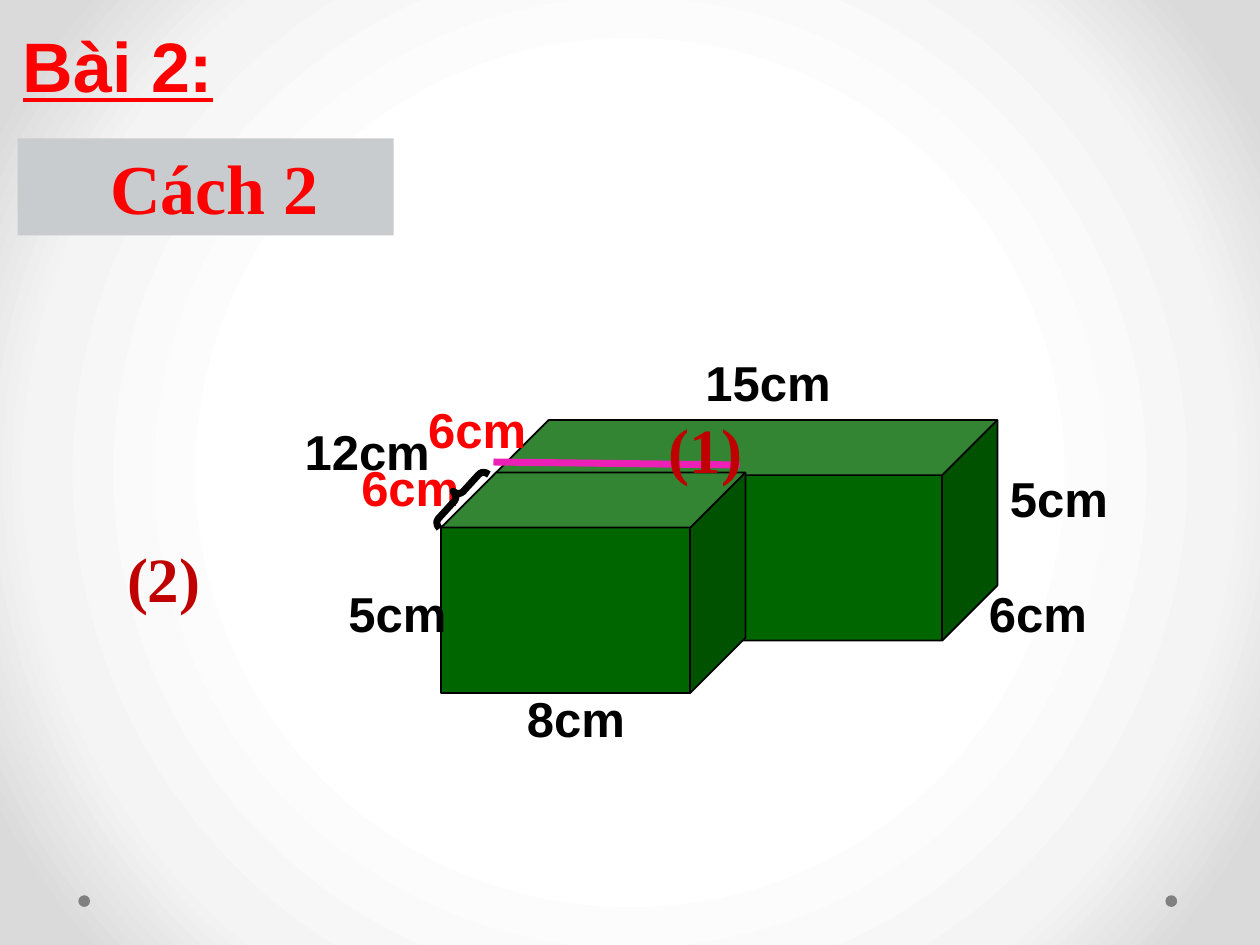
from typing import NamedTuple

from lxml.etree import SubElement
from pptx import Presentation
from pptx.dml.color import RGBColor
from pptx.enum.shapes import MSO_CONNECTOR, MSO_SHAPE
from pptx.enum.text import MSO_ANCHOR, PP_ALIGN
from pptx.oxml import parse_xml
from pptx.oxml.ns import nsdecls, qn
from pptx.util import Pt

COLOURS = {
    "black": "000000",
    "red": "FF0000",
    "dark red": "C00000",
    "green": "006600",
    "pink": "EC20B7",
    "grey": "808080",
    "silver": "C8CCCE",
}
BACKDROP_STOPS = {50: "FFFFFF", 76: "F4F4F4", 92: "DADADA"}


class Frame(NamedTuple):
    left: float
    top: float
    width: float
    height: float


class Label(NamedTuple):
    text: str
    frame: Frame
    colour: str = "black"
    size: int = 28
    font: str = "Arial"
    underline: bool = False


DOTS = [Frame(left, 511.6, 6.7, 6.7) for left in (44.8, 666)]
BACK_BLOCK = Frame(282, 240, 288, 126)
FRONT_BLOCK = Frame(252, 270, 174, 126)
BACK_LABELS = [
    Label("12cm", Frame(167, 237.6, 105, 41)),
    Label("15cm", Frame(396, 198, 102, 41)),
    Label("6cm", Frame(558, 330, 72, 41)),
    Label("5cm", Frame(570, 264, 72, 41)),
]
DEPTH_LABELS = [
    Label("6cm", Frame(199.4, 257.8, 72, 41), "red"),
    Label("6cm", Frame(237.6, 224.6, 72, 41), "red"),
]
FRONT_LABELS = [
    Label("8cm", Frame(294, 390, 72, 41)),
    Label("5cm", Frame(192, 330, 72, 41)),
]
TITLES = [
    Label("(1)", Frame(375, 231, 72, 51), "dark red", 36, "Times New Roman"),
    Label("(2)", Frame(65.5, 304.6, 57, 51), "dark red", 36, "Times New Roman"),
    Label("Bài 2:", Frame(6, 9.4, 126, 55.4), "red", 40, underline=True),
]
METHOD = Label(" Cách 2", Frame(10, 79, 215, 55.6), "red", 40, "Times New Roman")


def rgb(name: str) -> RGBColor:
    """Return the named colour."""
    return RGBColor.from_string(COLOURS[name])


def paint_background(page) -> None:
    """Fill the page with a circular gradient."""
    page.background.fill.solid()
    stops = "".join(
        f'<a:gs pos="{place * 1000}"><a:srgbClr val="{colour}"/></a:gs>'
        for place, colour in BACKDROP_STOPS.items()
    )
    gradient = parse_xml(
        f'<a:gradFill {nsdecls("a")} rotWithShape="1"><a:gsLst>{stops}</a:gsLst>'
        '<a:path path="circle"><a:fillToRect l="50000" t="50000" r="50000" b="50000"/>'
        "</a:path></a:gradFill>"
    )
    solid = page.element.xpath("p:cSld/p:bg/p:bgPr/a:solidFill")[0]
    solid.getparent().replace(solid, gradient)


def add_figure(page, kind, frame: Frame, fill: str = "", line: str = "", weight: float = 1):
    """Add a preset shape with optional fill and outline."""
    figure = page.shapes.add_shape(kind, *map(Pt, frame))
    figure.shadow.inherit = False
    if fill:
        figure.fill.solid()
        figure.fill.fore_color.rgb = rgb(fill)
    else:
        figure.fill.background()
    if line:
        figure.line.color.rgb = rgb(line)
        figure.line.width = Pt(weight)
    else:
        figure.line.fill.background()
    return figure


def write(box, label: Label, alignment=PP_ALIGN.LEFT) -> None:
    """Write the label's text into a box."""
    box.text_frame.word_wrap = True
    box.text_frame.vertical_anchor = MSO_ANCHOR.TOP
    para = box.text_frame.paragraphs[0]
    para.text = label.text
    para.alignment = alignment
    para.font.name = label.font
    para.font.size = Pt(label.size)
    para.font.bold = True
    para.font.underline = label.underline
    para.font.color.rgb = rgb(label.colour)


def add_labels(page, labels: list[Label]) -> None:
    """Add a text box for each label."""
    for label in labels:
        write(page.shapes.add_textbox(*map(Pt, label.frame)), label)


def add_divider(page) -> None:
    """Add the line that splits the solid in two."""
    divider = page.shapes.add_connector(
        MSO_CONNECTOR.STRAIGHT, Pt(422.6), Pt(265.7), Pt(282), Pt(264)
    )
    divider.line.color.rgb = rgb("pink")
    divider.line.width = Pt(4)
    SubElement(divider.element.spPr, qn("a:effectLst"))


def add_brace(page) -> None:
    """Add the slanted brace along the depth edge."""
    brace = add_figure(
        page, MSO_SHAPE.LEFT_BRACE, Frame(257.8, 262.8, 8.6, 41.8), line="black", weight=4
    )
    brace.adjustments[0] = 0.4
    brace.rotation = 42.5


def main() -> None:
    """Build and save the slide."""
    deck = Presentation()
    deck.slide_width, deck.slide_height = Pt(720), Pt(540)
    page = deck.slides.add_slide(deck.slide_layouts[6])
    paint_background(page)
    for dot in DOTS:
        add_figure(page, MSO_SHAPE.OVAL, dot, "grey")
    add_figure(page, MSO_SHAPE.CUBE, BACK_BLOCK, "green", "black")
    add_labels(page, BACK_LABELS)
    add_divider(page)
    add_labels(page, DEPTH_LABELS)
    add_figure(page, MSO_SHAPE.CUBE, FRONT_BLOCK, "green", "black")
    add_labels(page, FRONT_LABELS)
    add_brace(page)
    add_labels(page, TITLES)
    banner = add_figure(page, MSO_SHAPE.RECTANGLE, METHOD.frame, "silver")
    write(banner, METHOD, PP_ALIGN.CENTER)
    deck.save("out.pptx")


if __name__ == "__main__":
    main()
